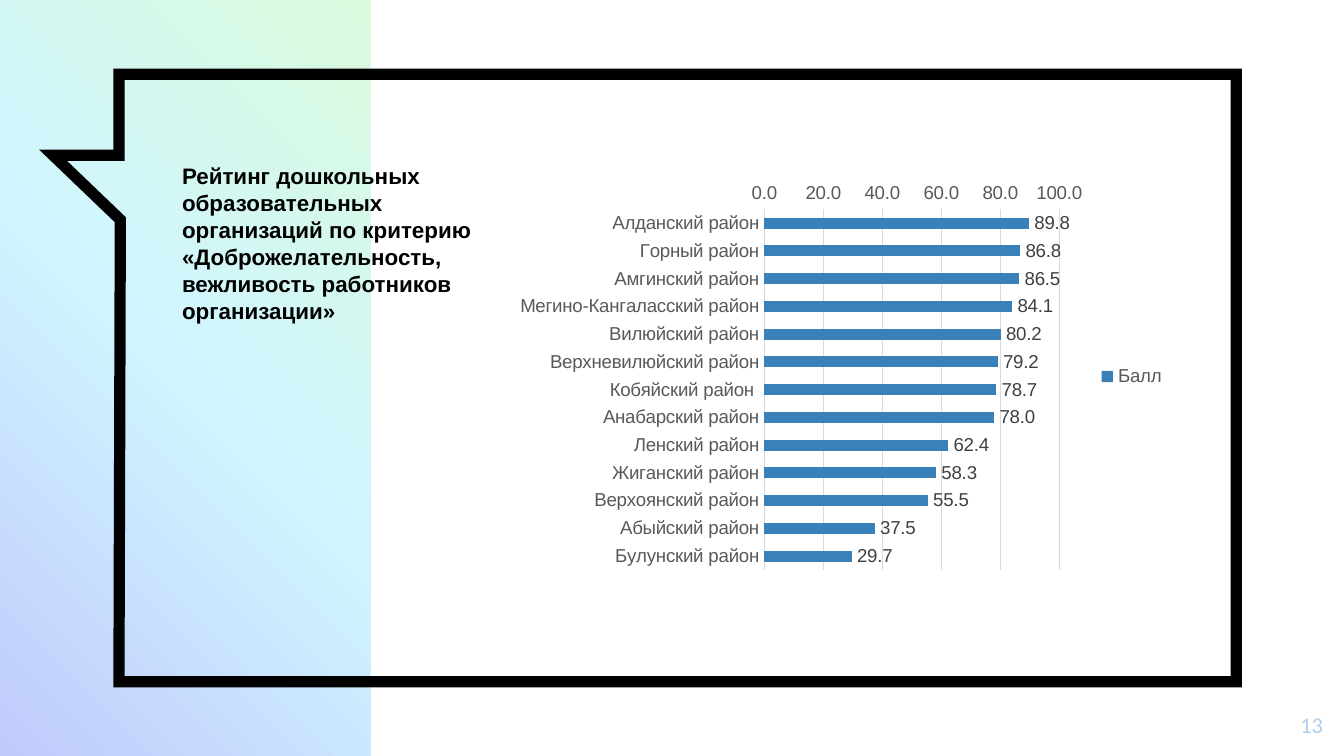
from copy import deepcopy
from typing import NamedTuple

from pptx import Presentation
from pptx.chart.data import CategoryChartData
from pptx.dml.color import RGBColor
from pptx.enum.chart import XL_CHART_TYPE, XL_LABEL_POSITION, XL_LEGEND_POSITION, XL_TICK_MARK
from pptx.enum.shapes import MSO_SHAPE
from pptx.enum.text import MSO_ANCHOR, PP_ALIGN
from pptx.oxml.ns import qn
from pptx.slide import Slide
from pptx.text.text import Font
from pptx.util import Pt
from lxml.etree import SubElement

PX = 9525
SLIDE_WIDTH, SLIDE_HEIGHT = 960, 540
BLACK = RGBColor(0x00, 0x00, 0x00)
PALE_BLUE = RGBColor(0xAF, 0xCF, 0xEC)
BAR_BLUE = RGBColor(0x3A, 0x81, 0xBA)
GRID_GRAY = RGBColor(0xD9, 0xD9, 0xD9)
AXIS_GRAY = RGBColor(0x59, 0x59, 0x59)
LABEL_GRAY = RGBColor(0x40, 0x40, 0x40)
PANEL_COLORS = (
    RGBColor(0xC0, 0xCA, 0xFC),
    RGBColor(0xD0, 0xF5, 0xFF),
    RGBColor(0xDA, 0xFB, 0xDD),
)
BUBBLE_POINTS = [(85, 53), (883, 53), (883, 487), (85, 487), (86, 157), (38, 111), (85, 111)]


class Box(NamedTuple):
    left: int
    top: int
    width: int
    height: int

    def emu(self) -> list[int]:
        return [value * PX for value in self]


class Label(NamedTuple):
    box: Box
    text: str
    font_name: str
    color: RGBColor
    bold: bool
    align: PP_ALIGN
    inset: tuple[int, int]


class District(NamedTuple):
    name: str
    score: float


LABELS = [
    Label(Box(897, 498, 58, 41), "13", "Calibri", PALE_BLUE, False,
          PP_ALIGN.RIGHT, (10, 10)),
    Label(Box(120, 111, 265, 126),
          "Рейтинг дошкольных образовательных организаций по критерию "
          "«Доброжелательность, вежливость работников организации»",
          "Arial", BLACK, True, PP_ALIGN.LEFT, (10, 5)),
]
DISTRICTS = [
    District("Алданский район", 89.8),
    District("Горный район", 86.8),
    District("Амгинский район", 86.5),
    District("Мегино-Кангаласский район", 84.1),
    District("Вилюйский район", 80.2),
    District("Верхневилюйский район", 79.2),
    District("Кобяйский район ", 78.7),
    District("Анабарский район", 78.0),
    District("Ленский район", 62.4),
    District("Жиганский район", 58.3),
    District("Верхоянский район", 55.5),
    District("Абыйский район", 37.5),
    District("Булунский район", 29.7),
]


def style_font(font: Font, size: int, color: RGBColor, name: str = "Arial", bold: bool = False) -> None:
    font.name = name
    font.size = Pt(size)
    font.bold = bold
    font.color.rgb = color


def add_gradient_panel(slide: Slide, box: Box) -> None:
    panel = slide.shapes.add_shape(MSO_SHAPE.RECTANGLE, *box.emu())
    panel.shadow.inherit = False
    panel.line.fill.background()
    panel.fill.gradient()
    panel.fill.gradient_angle = 45
    stop_list = panel._element.spPr.find(".//" + qn("a:gsLst"))
    stop_list.insert(1, deepcopy(stop_list[0]))
    for index, (stop, color) in enumerate(zip(panel.fill.gradient_stops, PANEL_COLORS)):
        stop.color.rgb = color
        stop.position = index / 2


def add_bubble(slide: Slide, points: list[tuple[int, int]]) -> None:
    builder = slide.shapes.build_freeform(*points[0], scale=PX)
    builder.add_line_segments(points[1:], close=True)
    bubble = builder.convert_to_shape()
    bubble.shadow.inherit = False
    bubble.fill.background()
    bubble.line.color.rgb = BLACK
    bubble.line.width = Pt(6)
    SubElement(bubble.line._get_or_add_ln(), qn("a:miter"), lim="800000")


def add_label(slide: Slide, label: Label) -> None:
    frame = slide.shapes.add_textbox(*label.box.emu()).text_frame
    frame.word_wrap = True
    frame.vertical_anchor = MSO_ANCHOR.TOP
    horizontal, vertical = label.inset
    frame.margin_left = frame.margin_right = horizontal * PX
    frame.margin_top = frame.margin_bottom = vertical * PX
    paragraph = frame.paragraphs[0]
    paragraph.alignment = label.align
    run = paragraph.add_run()
    run.text = label.text
    style_font(run.font, 12, label.color, label.font_name, label.bold)


def add_rating_chart(slide: Slide, box: Box, districts: list[District]) -> None:
    data = CategoryChartData(number_format="0.0")
    data.categories = [district.name for district in districts]
    data.add_series("Балл", [district.score for district in districts])
    chart = slide.shapes.add_chart(XL_CHART_TYPE.BAR_CLUSTERED, *box.emu(), data).chart
    style_font(chart.font, 10, BLACK)
    chart.has_title = False
    chart.has_legend = True
    chart.legend.position = XL_LEGEND_POSITION.RIGHT
    chart.legend.include_in_layout = False
    style_font(chart.legend.font, 10, AXIS_GRAY)

    for axis in (chart.category_axis, chart.value_axis):
        axis.major_tick_mark = XL_TICK_MARK.NONE
        axis.minor_tick_mark = XL_TICK_MARK.NONE
        style_font(axis.tick_labels.font, 10, AXIS_GRAY)

    category_axis, value_axis = chart.category_axis, chart.value_axis
    category_axis.reverse_order = True
    value_axis.minimum_scale = 0
    value_axis.maximum_scale = 100
    value_axis.major_unit = 20
    value_axis.tick_labels.number_format = "0.0"
    value_axis.tick_labels.number_format_is_linked = False
    value_axis.format.line.fill.background()
    for line in (category_axis.format.line, value_axis.major_gridlines.format.line):
        line.color.rgb = GRID_GRAY
        line.width = Pt(0.75)

    plot = chart.plots[0]
    plot.gap_width = 150
    plot.vary_by_categories = False
    series = plot.series[0]
    series.format.fill.solid()
    series.format.fill.fore_color.rgb = BAR_BLUE
    labels = series.data_labels
    labels.show_value = True
    labels.number_format = "0.0"
    labels.number_format_is_linked = False
    labels.position = XL_LABEL_POSITION.OUTSIDE_END
    style_font(labels.font, 10, LABEL_GRAY)


def main() -> None:
    presentation = Presentation()
    presentation.slide_width = SLIDE_WIDTH * PX
    presentation.slide_height = SLIDE_HEIGHT * PX
    slide = presentation.slides.add_slide(presentation.slide_layouts[6])
    add_gradient_panel(slide, Box(0, 0, 265, SLIDE_HEIGHT))
    add_bubble(slide, BUBBLE_POINTS)
    for label in LABELS:
        add_label(slide, label)
    add_rating_chart(slide, Box(362, 125, 480, 288), DISTRICTS)
    presentation.save("out.pptx")


if __name__ == "__main__":
    main()
